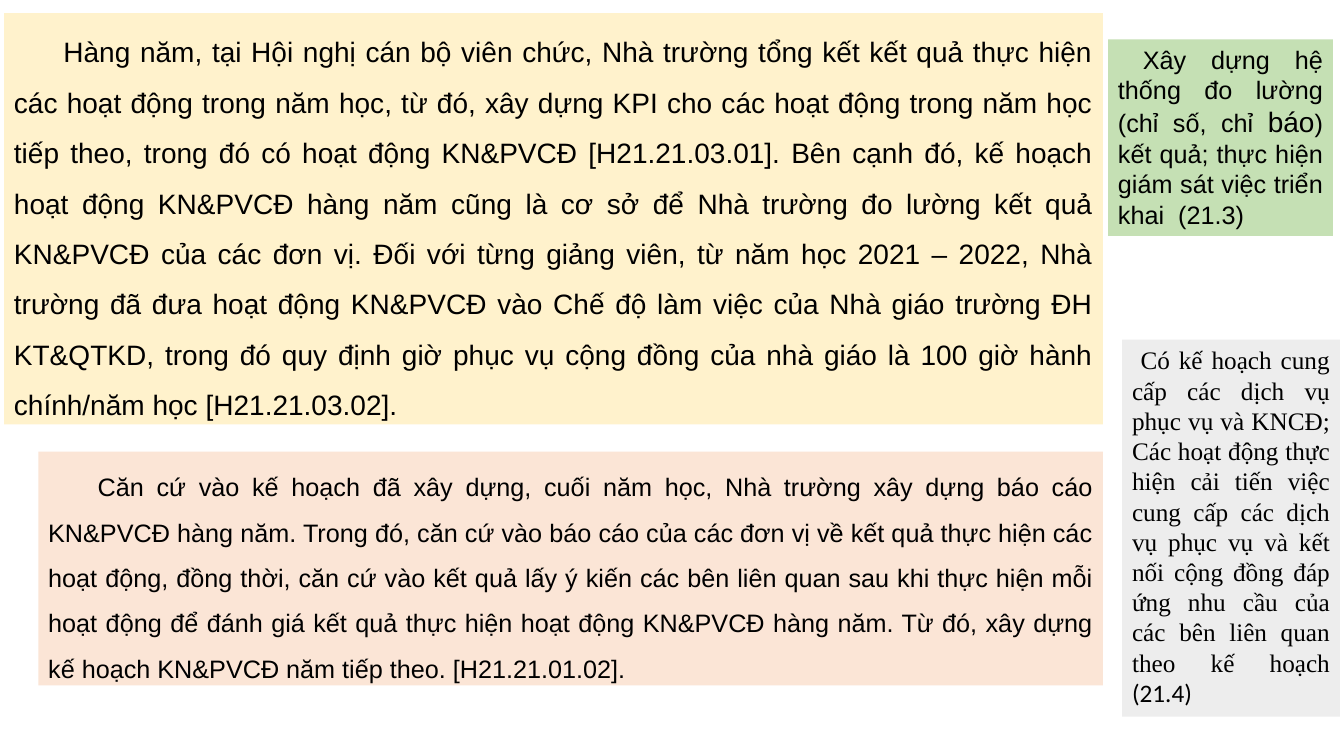
from pptx import Presentation
from pptx.dml.color import RGBColor
from pptx.enum import text
from pptx.util import Inches, Pt


def rgb(value):
    return RGBColor.from_string(value)


deck = Presentation()
deck.slide_width, deck.slide_height = Inches(13.33), Inches(7.5)
slide = deck.slides.add_slide(deck.slide_layouts[6])


def add_panel(box, fill, size, font, pieces):
    """Add a filled text panel; each piece is (words, own size, own font)."""
    panel = slide.shapes.add_textbox(*(Inches(length) for length in box))
    panel.fill.solid()
    panel.fill.fore_color.rgb = rgb(fill)
    frame = panel.text_frame
    frame.word_wrap = True
    frame.auto_size = text.MSO_AUTO_SIZE.SHAPE_TO_FIT_TEXT
    paragraph = frame.paragraphs[0]
    paragraph.alignment = text.PP_ALIGN.JUSTIFY
    paragraph.font.size = Pt(size)
    paragraph.font.name = font
    paragraph.font.color.rgb = rgb("000000")
    for words, own_size, own_font in pieces:
        run = paragraph.add_run()
        run.text = words
        if own_size:
            run.font.size = Pt(own_size)
        if own_font:
            run.font.name = own_font
    return paragraph


# Findings: wide panels with a first-line indent and open line spacing
findings = [
    ((0.04, 0.13, 10.9, 4.08), "FFF2CC", 20,
     "Hàng năm, tại Hội nghị cán bộ viên chức, Nhà trường tổng kết kết quả thực hiện "
     "các hoạt động trong năm học, từ đó, xây dựng KPI cho các hoạt động trong năm học "
     "tiếp theo, trong đó có hoạt động KN&PVCĐ [H21.21.03.01]. Bên cạnh đó, kế hoạch "
     "hoạt động KN&PVCĐ hàng năm cũng là cơ sở để Nhà trường đo lường kết quả "
     "KN&PVCĐ của các đơn vị. Đối với từng giảng viên, từ năm học 2021 – 2022, Nhà "
     "trường đã đưa hoạt động KN&PVCĐ vào Chế độ làm việc của Nhà giáo trường ĐH "
     "KT&QTKD, trong đó quy định giờ phục vụ cộng đồng của nhà giáo là 100 giờ hành "
     "chính/năm học [H21.21.03.02]. "),
    ((0.38, 4.48, 10.56, 2.32), "FBE5D6", 18,
     "Căn cứ vào kế hoạch đã xây dựng, cuối năm học, Nhà trường xây dựng báo cáo "
     "KN&PVCĐ hàng năm. Trong đó, căn cứ vào báo cáo của các đơn vị về kết quả thực hiện các "
     "hoạt động, đồng thời, căn cứ vào kết quả lấy ý kiến các bên liên quan sau khi thực hiện mỗi "
     "hoạt động để đánh giá kết quả thực hiện hoạt động KN&PVCĐ hàng năm. Từ đó, xây dựng "
     "kế hoạch KN&PVCĐ năm tiếp theo. [H21.21.01.02]."),
]
for box, fill, size, words in findings:
    finding = add_panel(box, fill, size, "Arial", [(words, None, None)])
    finding.line_spacing = 1.5
    finding.space_before = finding.space_after = Pt(3)
    indents = finding._p.get_or_add_pPr()
    indents.set("marL", "0")
    indents.set("indent", str(Inches(0.49)))

# Criteria: narrow panels on the right
add_panel((10.99, 0.39, 2.23, 1.95), "C5E0B4", 18, "Arial", [
    (" Xây dựng hệ thống đo lường (chỉ số, chỉ ", None, None),
    ("báo", 20, None),
    (") kết quả; thực hiện giám sát việc triển khai  (21.3)", None, None),
])
add_panel((11.13, 3.37, 2.16, 3.74), "EDEDED", 18, "Calibri", [
    (" ", None, None),
    ("Có kế hoạch cung cấp các dịch vụ phục vụ và KNCĐ; Các hoạt động thực hiện "
     "cải tiến việc cung cấp các dịch vụ phục vụ và kết nối cộng đồng đáp ứng nhu cầu "
     "của các bên liên quan theo kế hoạch ", None, "Times New Roman"),
    ("(21.4)", None, None),
])

deck.save("out.pptx")
